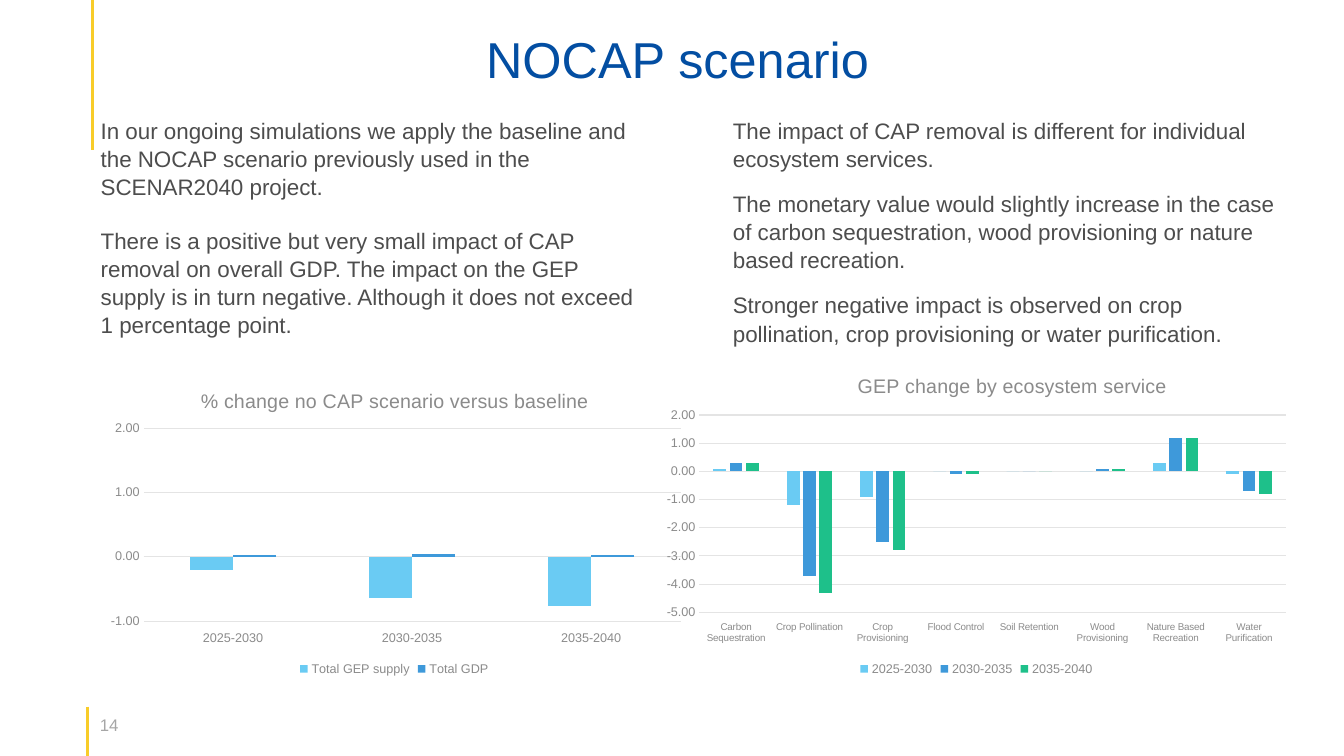
"""Build the NOCAP scenario slide with its two column charts."""
from dataclasses import dataclass

from lxml.etree import SubElement
from pptx import Presentation
from pptx.chart.data import CategoryChartData
from pptx.dml.color import RGBColor
from pptx.enum.chart import (XL_CHART_TYPE, XL_LEGEND_POSITION,
                             XL_TICK_LABEL_POSITION, XL_TICK_MARK)
from pptx.enum.shapes import MSO_CONNECTOR
from pptx.enum.text import MSO_ANCHOR, PP_ALIGN
from pptx.oxml import parse_xml
from pptx.oxml.ns import nsdecls, qn
from pptx.util import Pt

PX = 9144


@dataclass(frozen=True)
class Theme:
    font: str = "Arial"
    title: str = "034EA2"
    body: str = "4D4D4D"
    page: str = "A6A6A6"
    label: str = "8B8B8B"
    grid: str = "E4E4E4"
    rule: str = "F8CC29"
    bars: tuple = ("6ACBF3", "3E99DA", "1EC08A")
    head_pt: int = 36
    body_pt: int = 16
    chart_pt: int = 14
    page_pt: int = 12
    label_pt: int = 9
    small_pt: int = 7


THEME = Theme()


def px(*vals):
    return [val * PX for val in vals]


def apply(item, vals):
    for name, val in vals.items():
        setattr(item, name, val)


def ink(font, size, color):
    apply(font, {"name": THEME.font, "size": Pt(size), "bold": False})
    font.color.rgb = RGBColor.from_string(color)


def stroke(line, color, width):
    line.color.rgb = RGBColor.from_string(color)
    line.width = Pt(width)


def add_text(slide, box, lines, size, color, frame=None, para=None):
    text = slide.shapes.add_textbox(*px(*box)).text_frame
    apply(text, {"word_wrap": True, **(frame or {})})
    for i, line in enumerate(lines):
        part = text.add_paragraph() if i else text.paragraphs[0]
        apply(part, para or {})
        run = part.add_run()
        run.text = line
        ink(run.font, size, color)


def add_rule(slide, x, top, end):
    rule = slide.shapes.add_connector(MSO_CONNECTOR.STRAIGHT, *px(x, top, x, end))
    stroke(rule.line, THEME.rule, 2.25)
    SubElement(rule._element.spPr, qn("a:effectLst"))


def place(owner, spots, inner=False):
    """Give a chart part a manual layout in fractions of the chart."""
    old = owner.find(qn("c:layout"))
    if old is not None:
        owner.remove(old)
    target = '<c:layoutTarget val="inner"/>' if inner else ""
    keys = ("x", "y", "w", "h")[:len(spots)]
    modes = "".join(f'<c:{key}Mode val="edge"/>' for key in keys[:2])
    sizes = "".join(f'<c:{key} val="{val}"/>' for key, val in zip(keys, spots))
    layout = parse_xml(f'<c:layout {nsdecls("c")}><c:manualLayout>{target}{modes}'
                       f'{sizes}</c:manualLayout></c:layout>')
    text = owner.find(qn("c:tx"))
    if text is not None:
        text.addnext(layout)
    else:
        owner.insert(0, layout)


def set_axes(chart, low, cat_pt):
    cat, val = chart.category_axis, chart.value_axis
    shared = {"major_tick_mark": XL_TICK_MARK.NONE,
              "minor_tick_mark": XL_TICK_MARK.NONE}
    for axis, size in ((cat, cat_pt), (val, THEME.label_pt)):
        apply(axis, shared)
        ink(axis.tick_labels.font, size, THEME.label)
    cat.tick_label_position = XL_TICK_LABEL_POSITION.LOW
    stroke(cat.format.line, THEME.grid, 0.75)
    apply(val, {"minimum_scale": low, "maximum_scale": 2, "major_unit": 1,
                "has_major_gridlines": True})
    apply(val.tick_labels, {"number_format": "0.00",
                            "number_format_is_linked": False})
    val.format.line.fill.background()
    stroke(val.major_gridlines.format.line, THEME.grid, 0.75)


def add_bars(slide, box, title, cats, rows, low, cat_pt, overlap, spot, area):
    data = CategoryChartData(number_format="0.00")
    data.categories = cats
    for name, vals in rows.items():
        data.add_series(name, vals)
    chart = slide.shapes.add_chart(
        XL_CHART_TYPE.COLUMN_CLUSTERED, *px(*box), data).chart
    ink(chart.font, 10, THEME.body)
    apply(chart, {"has_title": True, "has_legend": True})
    head = chart.chart_title
    head.text_frame.text = title
    ink(head.text_frame.paragraphs[0].runs[0].font, THEME.chart_pt, THEME.label)
    head.include_in_layout = False
    place(head._element, spot)
    apply(chart.legend, {"position": XL_LEGEND_POSITION.BOTTOM,
                         "include_in_layout": False})
    ink(chart.legend.font, THEME.label_pt, THEME.label)
    set_axes(chart, low, cat_pt)
    plot = chart.plots[0]
    apply(plot, {"gap_width": 219, "overlap": overlap,
                 "vary_by_categories": False})
    for bar, color in zip(plot.series, THEME.bars):
        bar.invert_if_negative = False
        bar.format.fill.solid()
        bar.format.fill.fore_color.rgb = RGBColor.from_string(color)
    place(chart._chartSpace.chart.plotArea, area, inner=True)


def main():
    deck = Presentation()
    apply(deck, {"slide_width": 1333 * PX, "slide_height": 750 * PX})
    slide = deck.slides.add_slide(deck.slide_layouts[6])
    add_rule(slide, 87, 701, 750)
    add_rule(slide, 92, 0, 149)
    add_text(slide, (99, 704, 49, 30), ["14"], THEME.page_pt, THEME.page,
             {"margin_left": 0, "margin_right": 0})
    add_text(slide, (111, 29, 1122, 60), ["NOCAP scenario"],
             THEME.head_pt, THEME.title,
             {"vertical_anchor": MSO_ANCHOR.BOTTOM, "margin_bottom": 0},
             {"alignment": PP_ALIGN.CENTER, "line_spacing": 0.9})
    add_text(slide, (90, 110, 559, 245), [
        "In our ongoing simulations we apply the baseline and the NOCAP "
        "scenario previously used in the SCENAR2040 project.",
        "There is a positive but very small impact of CAP removal on overall "
        "GDP. The impact on the GEP supply is in turn negative. Although it "
        "does not exceed 1 percentage point.",
    ], THEME.body_pt, THEME.body,
        para={"space_after": Pt(18), "line_spacing": 1.05})
    add_text(slide, (717, 110, 559, 216), [
        "The impact of CAP removal is different for individual ecosystem "
        "services.",
        "The monetary value would slightly increase in the case of carbon "
        "sequestration, wood provisioning or nature based recreation.",
        "Stronger negative impact is observed on crop pollination, crop "
        "provisioning or water purification.",
    ], THEME.body_pt, THEME.body,
        para={"space_after": Pt(12), "line_spacing": 1.05})
    spans = ["2025-2030", "2030-2035", "2035-2040"]
    add_bars(slide, (95, 366, 592, 309),
             "% change no CAP scenario versus baseline", spans,
             {"Total GEP supply": (-0.21, -0.64, -0.76),
              "Total GDP": (0.02, 0.04, 0.03)},
             -1, THEME.label_pt, 0, (0.17, 0.05), (0.08, 0.19, 0.9, 0.62))
    cats = ["Carbon Sequestration", "Crop Pollination", "Crop Provisioning",
            "Flood Control", "Soil Retention", "Wood Provisioning",
            "Nature Based Recreation", "Water Purification"]
    vals = [(0.1, -1.2, -0.9, 0, 0, 0, 0.3, -0.1),
            (0.3, -3.7, -2.5, -0.1, 0, 0.1, 1.2, -0.7),
            (0.3, -4.3, -2.8, -0.1, 0, 0.1, 1.2, -0.8)]
    add_bars(slide, (649, 354, 639, 321), "GEP change by ecosystem service",
             cats, dict(zip(spans, vals)), -5, THEME.small_pt, -27,
             (0.31, 0.04), (0.07, 0.18, 0.91, 0.61))
    deck.save("out.pptx")


if __name__ == "__main__":
    main()
